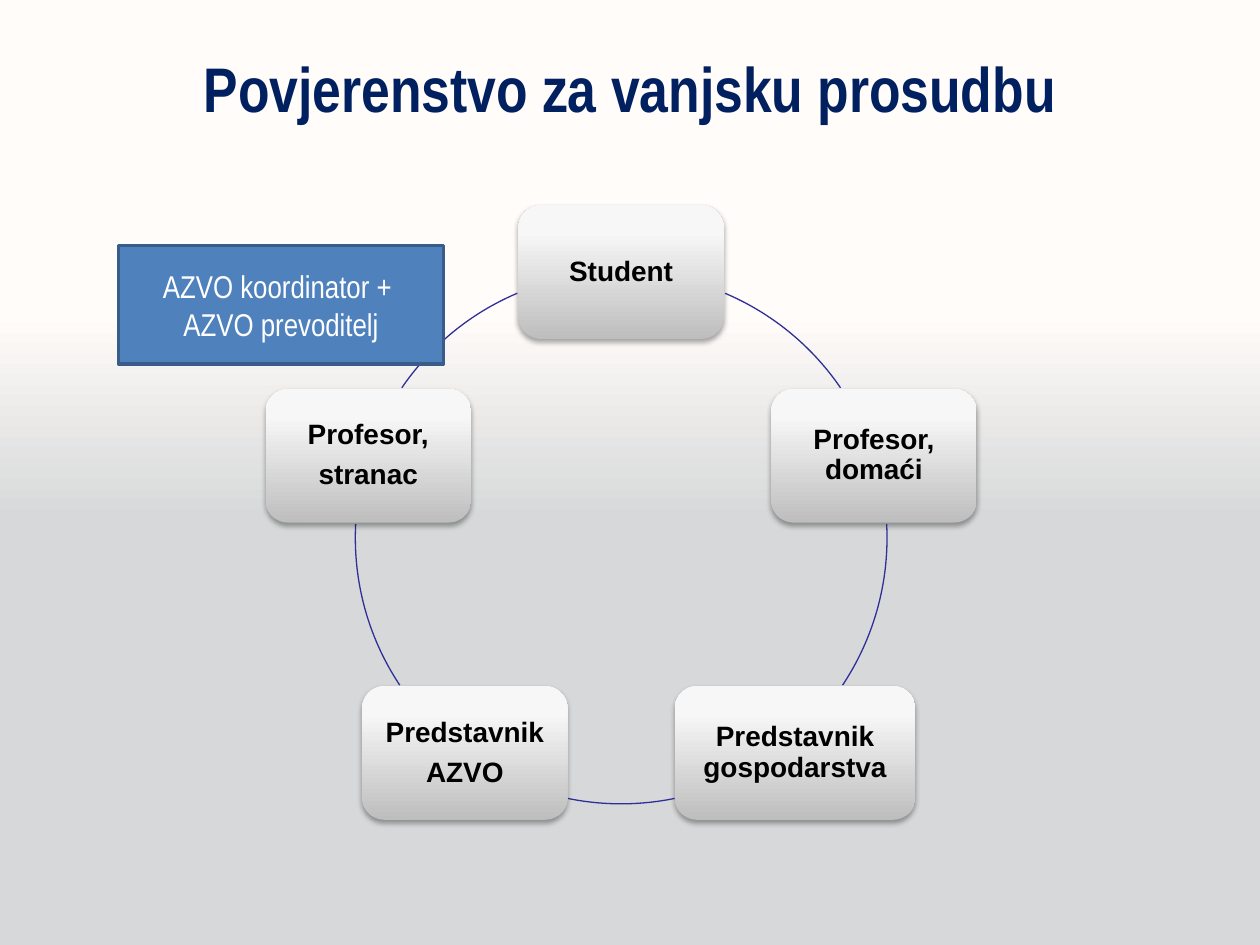
from copy import deepcopy
from dataclasses import dataclass
from math import cos, radians, sin

from lxml.etree import SubElement
from pptx import Presentation
from pptx.dml.color import RGBColor
from pptx.enum.shapes import MSO_SHAPE
from pptx.enum.text import MSO_ANCHOR, PP_ALIGN
from pptx.oxml.ns import qn
from pptx.util import Inches, Pt

MID_X, MID_Y, RADIUS = 4.93, 4.27, 2.11
CARD_W, CARD_H = 1.63, 1.06
SKY = [(0.45, "D7D8D9"), (0.67, "FFFCF9"), (0.81, "FFFCF9")]
STEEL = [(0, "BEBEBE"), (0.8, "F7F7F7"), (1, "F8F8F8")]


@dataclass
class Card:
    lines: list[str]
    width: float = CARD_W


@dataclass
class Arc:
    start: float
    end: float


@dataclass
class Style:
    font: str
    size: float
    color: str
    bold: bool = False


CARDS = [
    Card(["Student"]),
    Card(["Profesor, domaći"]),
    Card(["Predstavnik gospodarstva"], 1.91),
    Card(["Predstavnik", "AZVO"]),
    Card(["Profesor,", "stranac"]),
]
ARCS = [Arc(293, 325.6), Arc(357, 33.6), Arc(78.4, 101.6),
        Arc(146.4, 183), Arc(214.4, 247)]


def tint(code: str) -> RGBColor:
    return RGBColor.from_string(code)


def blend(fill, node, stops: list[tuple[float, str]]) -> None:
    fill.gradient()
    fill.gradient_angle = 90
    group = node.find(".//" + qn("a:gsLst"))
    group.append(deepcopy(group[-1]))
    for stop, (place, code) in zip(fill.gradient_stops, stops):
        stop.position = place
        stop.color.rgb = tint(code)


def write(frame, lines: list[str], style: Style,
          gap: float = 0, pitch: float = 1) -> None:
    frame.word_wrap = True
    for i, line in enumerate(lines):
        para = frame.paragraphs[0] if i == 0 else frame.add_paragraph()
        para.alignment = PP_ALIGN.CENTER
        para.line_spacing = pitch
        para.space_before = Pt(0)
        para.space_after = Pt(gap)
        run = para.add_run()
        run.text = line
        run.font.name = style.font
        run.font.size = Pt(style.size)
        run.font.bold = style.bold
        run.font.color.rgb = tint(style.color)


def add_shade(shape) -> None:
    effects = shape._element.spPr.find(qn("a:effectLst"))
    shade = SubElement(effects, qn("a:outerShdw"), blurRad=str(Pt(3.1)),
                       dist=str(Pt(1.8)), dir="5400000", rotWithShape="0")
    color = SubElement(shade, qn("a:srgbClr"), val="000000")
    SubElement(color, qn("a:alpha"), val="35000")


def draw_arc(slide, arc: Arc) -> None:
    shape = slide.shapes.add_shape(
        MSO_SHAPE.ARC, Inches(MID_X - RADIUS), Inches(MID_Y - RADIUS),
        Inches(2 * RADIUS), Inches(2 * RADIUS))
    shape.adjustments[0] = arc.start * 0.6
    shape.adjustments[1] = arc.end * 0.6
    shape.shadow.inherit = False
    shape.fill.background()
    shape.line.color.rgb = tint("2F2F98")
    shape.line.width = Pt(0.75)


def draw_card(slide, card: Card, angle: float) -> None:
    left = MID_X + RADIUS * cos(radians(angle)) - CARD_W / 2
    top = MID_Y + RADIUS * sin(radians(angle)) - CARD_H / 2
    shape = slide.shapes.add_shape(
        MSO_SHAPE.ROUNDED_RECTANGLE, Inches(left), Inches(top),
        Inches(card.width), Inches(CARD_H))
    shape.shadow.inherit = False
    blend(shape.fill, shape._element, STEEL)
    shape.line.fill.background()
    add_shade(shape)
    frame = shape.text_frame
    frame.vertical_anchor = MSO_ANCHOR.MIDDLE
    frame.margin_left = frame.margin_right = Inches(0.12)
    frame.margin_top = frame.margin_bottom = Inches(0.12)
    write(frame, card.lines, Style("Arial", 16, "000000", True), 5.6, 0.9)


def draw_title(slide) -> None:
    title = slide.shapes.title
    title.left, title.top = Inches(0.5), Inches(0.3)
    title.width, title.height = Inches(9), Inches(0.93)
    frame = title.text_frame
    frame.vertical_anchor = MSO_ANCHOR.TOP
    frame.margin_top = Inches(0.09)
    write(frame, ["Povjerenstvo za vanjsku prosudbu"],
          Style("Arial Narrow", 36, "002060", True))


def draw_note(slide) -> None:
    shape = slide.shapes.add_shape(
        MSO_SHAPE.RECTANGLE, Inches(0.94), Inches(1.95),
        Inches(2.58), Inches(0.94))
    shape.shadow.inherit = False
    shape.fill.solid()
    shape.fill.fore_color.rgb = tint("4F81BD")
    shape.line.color.rgb = tint("385D8A")
    shape.line.width = Pt(2)
    shape.text_frame.vertical_anchor = MSO_ANCHOR.MIDDLE
    write(shape.text_frame, ["AZVO koordinator + ", "AZVO prevoditelj"],
          Style("Arial Narrow", 18, "FFFFFF"))


def main() -> None:
    deck = Presentation()
    deck.slide_width, deck.slide_height = Inches(10), Inches(7.5)
    slide = deck.slides.add_slide(deck.slide_layouts[5])
    blend(slide.background.fill, slide._element, SKY)
    draw_title(slide)
    for i, (card, arc) in enumerate(zip(CARDS, ARCS)):
        draw_card(slide, card, 72 * i - 90)
        draw_arc(slide, arc)
    draw_note(slide)
    deck.save("out.pptx")


if __name__ == "__main__":
    main()
